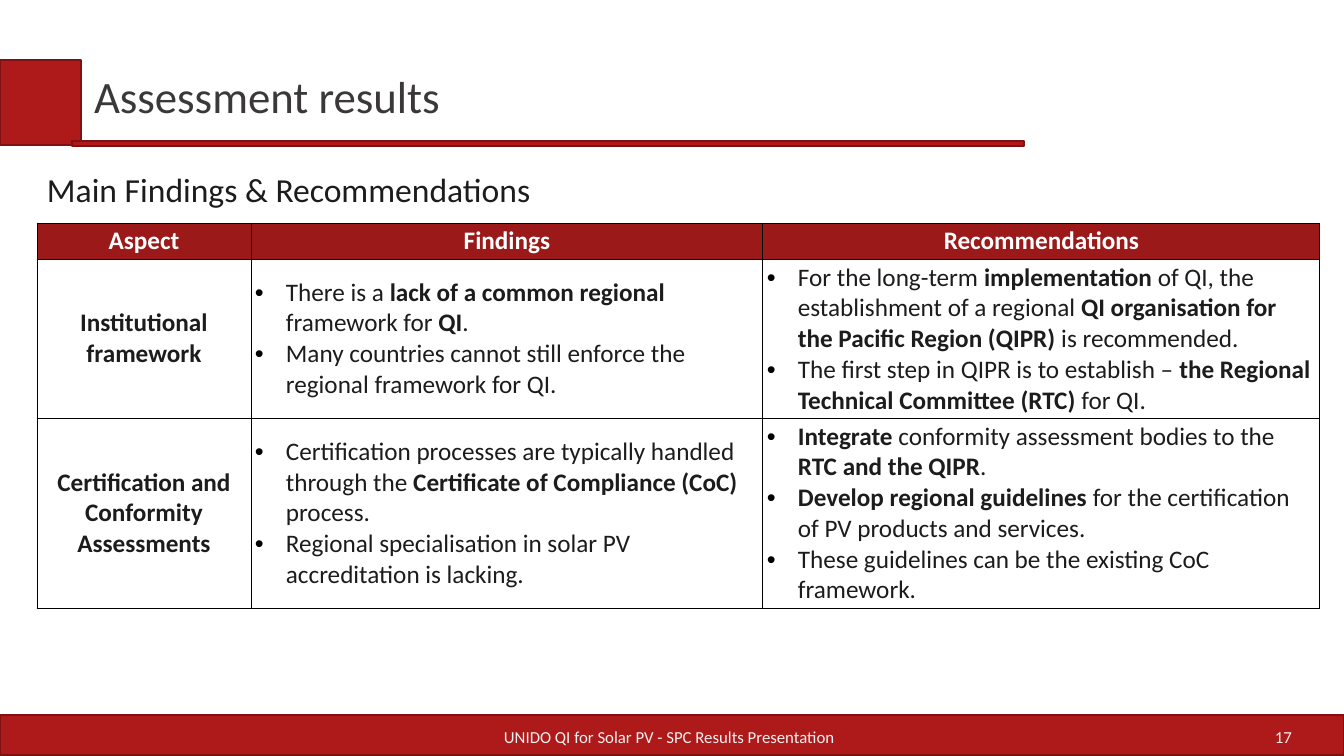
from dataclasses import dataclass
from lxml import etree
from pptx import Presentation, util as u
from pptx.dml.color import RGBColor
from pptx.enum import shapes, text
from pptx.oxml import ns

BARS = [(0, 715, 1344, 40), (0, 60, 81, 85), (72, 141, 952, 5)]

HEADINGS = ["Aspect", "Findings", "Recommendations"]
ASPECTS = [
    (
        "Institutional framework",
        [
            "There is a **lack of a common regional** framework for **QI**.",
            "Many countries cannot still enforce the regional framework for QI.",
        ],
        [
            "For the long-term **implementation** of QI, the establishment of a regional "
            "**QI organisation for the Pacific Region (QIPR)** is recommended.",
            "The first step in QIPR is to establish – "
            "**the Regional Technical Committee (RTC)** for QI.",
        ],
    ),
    (
        "Certification and Conformity Assessments",
        [
            "Certification processes are typically handled through the "
            "**Certificate of Compliance (CoC)** process.",
            "Regional specialisation in solar PV accreditation is lacking.",
        ],
        [
            "**Integrate** conformity assessment bodies to the **RTC and the QIPR**.",
            "**Develop regional guidelines** for the certification of PV products and services.",
            "These guidelines can be the existing CoC framework.",
        ],
    ),
]
TABLE_AT = (37, 223)
COLUMNS = [214, 512, 557]
ROWS = [36, 159, 190]
CELL_INSETS = (4, 3)
BULLET_INDENT = 31


@dataclass(frozen=True)
class Theme:
    font: str = "Calibri"
    red: str = "AE1919"
    edge: str = "7E1212"
    header: str = "9B1919"
    ink: str = "1D1C1C"
    heading: str = "3A3838"
    pale: str = "F2F2F2"
    white: str = "FFFFFF"
    black: str = "000000"
    title_size: int = 32
    subtitle_size: int = 24
    table_size: int = 18
    footer_size: int = 12
    edge_width: float = 0.85
    grid_width: float = 0.75


THEME = Theme()
LEFT, CENTER, RIGHT = text.PP_ALIGN.LEFT, text.PP_ALIGN.CENTER, text.PP_ALIGN.RIGHT

LABELS = [
    ("UNIDO QI for Solar PV - SPC Results Presentation", (364, 717, 611, 40),
     THEME.footer_size, THEME.pale, CENTER, 1.0),
    ("Main Findings & Recommendations", (37, 145, 845, 93),
     THEME.subtitle_size, THEME.ink, LEFT, 0.9),
    ("Assessment results", (84, 62, 845, 75),
     THEME.title_size, THEME.heading, LEFT, 0.9),
    ("17", (985, 717, 317, 40),
     THEME.footer_size, THEME.pale, RIGHT, 1.0),
]


def px(length):
    return u.Inches(length / 100.8)


def style(span, size, color, bold=False):
    span.font.name = THEME.font
    span.font.size = u.Pt(size)
    span.font.bold = bold
    span.font.color.rgb = RGBColor.from_string(color)


def add_xml(parent, tag, **attributes):
    return etree.SubElement(parent, ns.qn(tag), attributes)


def add_bar(page, place):
    bar = page.shapes.add_shape(shapes.MSO_SHAPE.RECTANGLE, *map(px, place))
    bar.shadow.inherit = False
    bar.fill.solid()
    bar.fill.fore_color.rgb = RGBColor.from_string(THEME.red)
    bar.line.color.rgb = RGBColor.from_string(THEME.edge)
    bar.line.width = u.Pt(THEME.edge_width)


def add_label(page, wording, place, size, color, align, spacing):
    box = page.shapes.add_textbox(*map(px, place))
    frame = box.text_frame
    frame.text = wording
    frame.word_wrap = True
    frame.vertical_anchor = text.MSO_ANCHOR.MIDDLE
    frame.margin_left = frame.margin_right = px(10)
    frame.margin_top = frame.margin_bottom = px(5)
    para = frame.paragraphs[0]
    para.alignment = align
    para.line_spacing = spacing
    style(para.runs[0], size, color)


def add_borders(cell):
    properties = cell._tc.get_or_add_tcPr()
    for side in ("a:lnL", "a:lnR", "a:lnT", "a:lnB"):
        line = add_xml(properties, side, w=str(u.Pt(THEME.grid_width)))
        add_xml(add_xml(line, "a:solidFill"), "a:srgbClr", val=THEME.black)


def prepare_cell(cell):
    cell.vertical_anchor = text.MSO_ANCHOR.MIDDLE
    cell.margin_left = cell.margin_right = px(CELL_INSETS[0])
    cell.margin_top = cell.margin_bottom = px(CELL_INSETS[1])
    add_borders(cell)
    cell.fill.background()


def write_heading(cell, wording, color):
    cell.text_frame.text = wording
    para = cell.text_frame.paragraphs[0]
    para.alignment = CENTER
    style(para.runs[0], THEME.table_size, color, bold=True)


def write_bullets(cell, points):
    frame = cell.text_frame
    frame.text = "\n".join(points)
    for para, point in zip(frame.paragraphs, points):
        properties = para._p.get_or_add_pPr()
        properties.set("marL", str(px(BULLET_INDENT)))
        properties.set("indent", str(-px(BULLET_INDENT)))
        add_xml(add_xml(properties, "a:buClr"), "a:srgbClr", val=THEME.black)
        add_xml(properties, "a:buFont", typeface="Arial")
        add_xml(properties, "a:buChar", char="•")
        para.text = ""
        for index, part in enumerate(point.split("**")):
            if part:
                span = para.add_run()
                span.text = part
                style(span, THEME.table_size, THEME.ink, bold=index % 2 == 1)


def add_findings(page):
    size = (sum(COLUMNS), sum(ROWS))
    table = page.shapes.add_table(
        len(ROWS), len(COLUMNS), *map(px, TABLE_AT + size)).table
    table.horz_banding = False
    for column, width in zip(table.columns, COLUMNS):
        column.width = px(width)
    for row, height in zip(table.rows, ROWS):
        row.height = px(height)
    for cell in table.iter_cells():
        prepare_cell(cell)
    for index, heading in enumerate(HEADINGS):
        cell = table.cell(0, index)
        cell.fill.solid()
        cell.fill.fore_color.rgb = RGBColor.from_string(THEME.header)
        write_heading(cell, heading, THEME.white)
    for index, (aspect, *lists) in enumerate(ASPECTS, start=1):
        write_heading(table.cell(index, 0), aspect, THEME.ink)
        for column, points in enumerate(lists, start=1):
            write_bullets(table.cell(index, column), points)


def main():
    deck = Presentation()
    deck.slide_width, deck.slide_height = px(1344), px(756)
    page = deck.slides.add_slide(deck.slide_layouts[6])
    for place in BARS:
        add_bar(page, place)
    for label in LABELS:
        add_label(page, *label)
    add_findings(page)
    deck.save("out.pptx")


if __name__ == "__main__":
    main()
